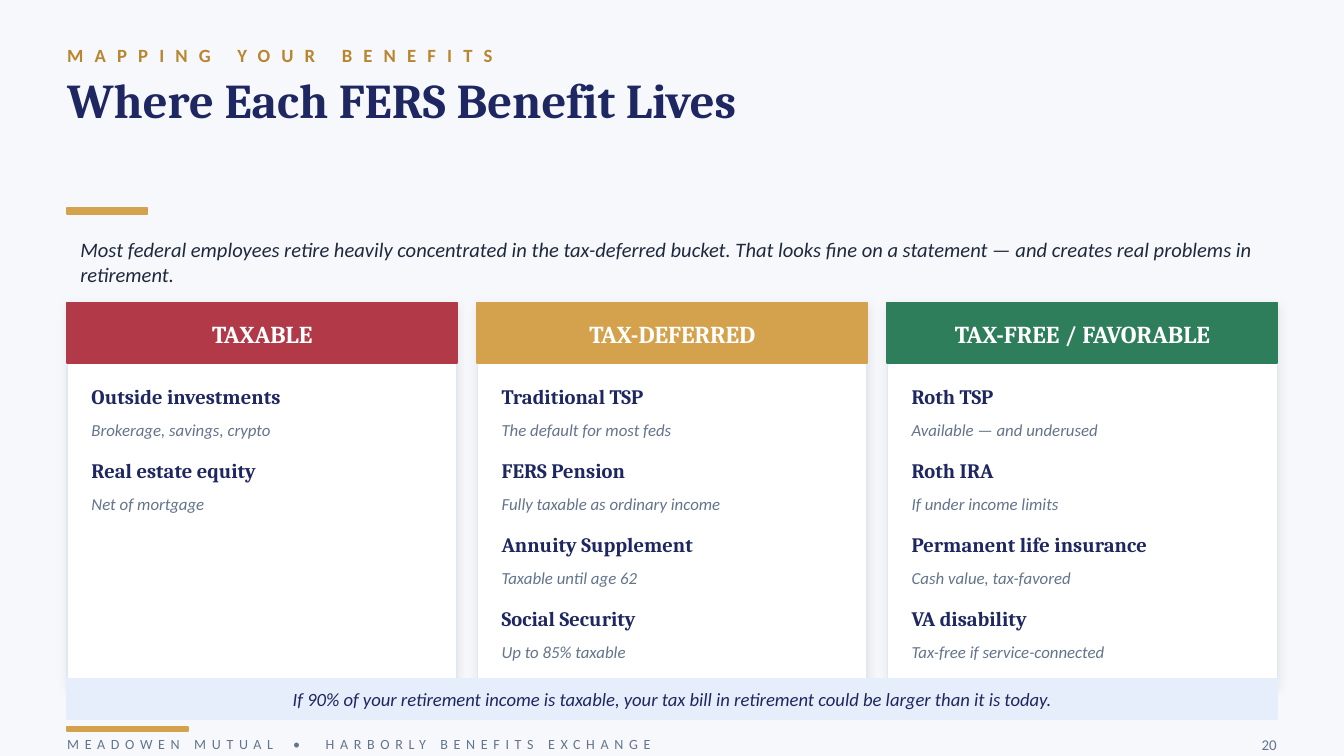
from dataclasses import dataclass

from lxml.etree import SubElement
from pptx import Presentation
from pptx.dml.color import RGBColor
from pptx.enum.shapes import MSO_SHAPE
from pptx.enum.text import MSO_ANCHOR, PP_ALIGN
from pptx.oxml.ns import qn
from pptx.util import Cm, Pt

NAVY, GOLD, SLATE, WHITE = "1E2761", "D4A24C", "64748B", "FFFFFF"
HEADING, BODY = "Cambria", "Calibri"
LEFT, FULL_WIDTH = 1.27, 22.86
CARD_TOP, CARD_WIDTH, CARD_PITCH, CARD_INSET = 5.72, 7.37, 7.75, 0.46
ENTRY_TOP, ENTRY_PITCH, NAME_HEIGHT = 7.19, 1.4, 0.61


@dataclass
class Entry:
    name: str
    note: str


@dataclass
class Bucket:
    title: str
    color: str
    entries: list[Entry]


BUCKETS = [
    Bucket("TAXABLE", "B23A48", [
        Entry("Outside investments", "Brokerage, savings, crypto"),
        Entry("Real estate equity", "Net of mortgage"),
    ]),
    Bucket("TAX-DEFERRED", GOLD, [
        Entry("Traditional TSP", "The default for most feds"),
        Entry("FERS Pension", "Fully taxable as ordinary income"),
        Entry("Annuity Supplement", "Taxable until age 62"),
        Entry("Social Security", "Up to 85% taxable"),
    ]),
    Bucket("TAX-FREE / FAVORABLE", "2E7D5B", [
        Entry("Roth TSP", "Available — and underused"),
        Entry("Roth IRA", "If under income limits"),
        Entry("Permanent life insurance", "Cash value, tax-favored"),
        Entry("VA disability", "Tax-free if service-connected"),
    ]),
]


def rgb(color: str) -> RGBColor:
    return RGBColor.from_string(color)


def add_span(para, text: str, size: float, color: str, font: str = BODY,
             bold: bool = False, italic: bool = False, spacing: float = 0) -> None:
    span = para.add_run()
    span.text = text
    span.font.name, span.font.size = font, Pt(size)
    span.font.bold, span.font.italic = bold, italic
    span.font.color.rgb = rgb(color)
    if spacing:
        span._r.get_or_add_rPr().set("spc", str(round(spacing * 100)))


def write(page, text: str, left: float, top: float, width: float, height: float, *,
          align=PP_ALIGN.LEFT, anchor=MSO_ANCHOR.MIDDLE,
          inset: tuple[float, float] = (0, 0), **style):
    box = page.shapes.add_textbox(Cm(left), Cm(top), Cm(width), Cm(height))
    frame = box.text_frame
    frame.word_wrap = True
    frame.vertical_anchor = anchor
    frame.margin_left = frame.margin_right = Cm(inset[0])
    frame.margin_top = frame.margin_bottom = Cm(inset[1])
    para = frame.paragraphs[0]
    para.alignment = align
    add_span(para, text, **style)
    return para


def add_block(page, left: float, top: float, width: float, height: float,
              fill: str, line: str = "", line_width: float = 1):
    block = page.shapes.add_shape(MSO_SHAPE.RECTANGLE, Cm(left), Cm(top), Cm(width), Cm(height))
    block.fill.solid()
    block.fill.fore_color.rgb = rgb(fill)
    block.line.color.rgb = rgb(line or fill)
    block.line.width = Pt(line_width)
    block.shadow.inherit = False
    return block


def add_soft_shadow(block) -> None:
    effects = block._element.spPr.find(qn("a:effectLst"))
    shadow = SubElement(effects, qn("a:outerShdw"), blurRad=str(Pt(6)), dist=str(Pt(1.5)),
                        dir="5400000", algn="bl", rotWithShape="0")
    color = SubElement(shadow, qn("a:srgbClr"), val="000000")
    SubElement(color, qn("a:alpha"), val="8000")


def add_bucket(page, bucket: Bucket, left: float) -> None:
    card = add_block(page, left, CARD_TOP, CARD_WIDTH, 7.24, WHITE, "E2E8F0", 0.75)
    add_soft_shadow(card)
    add_block(page, left, CARD_TOP, CARD_WIDTH, 1.14, bucket.color)
    write(page, bucket.title, left, 5.87, CARD_WIDTH, 0.89, align=PP_ALIGN.CENTER,
          size=13, color=WHITE, font=HEADING, bold=True)
    text_left, text_width = left + CARD_INSET, CARD_WIDTH - 2 * CARD_INSET
    for row, entry in enumerate(bucket.entries):
        top = ENTRY_TOP + row * ENTRY_PITCH
        write(page, entry.name, text_left, top, text_width, NAME_HEIGHT,
              size=11, color=NAVY, font=HEADING, bold=True)
        write(page, entry.note, text_left, top + NAME_HEIGHT, text_width, 0.66,
              size=9, color=SLATE, italic=True)


def main() -> None:
    deck = Presentation()
    deck.slide_width, deck.slide_height = Cm(25.4), Cm(14.29)
    page = deck.slides.add_slide(deck.slide_layouts[6])
    page.background.fill.solid()
    page.background.fill.fore_color.rgb = rgb("F6F8FC")

    # Heading
    write(page, "MAPPING YOUR BENEFITS", LEFT, 0.71, FULL_WIDTH, 0.66,
          size=10, color="B8862E", bold=True, spacing=6)
    write(page, "Where Each FERS Benefit Lives", LEFT, 1.32, 23.37, 2.54,
          anchor=MSO_ANCHOR.TOP, size=26, color=NAVY, font=HEADING, bold=True)
    add_block(page, LEFT, 3.94, 1.52, 0.1, GOLD)
    write(page, "Most federal employees retire heavily concentrated in the tax-deferred bucket. "
          "That looks fine on a statement — and creates real problems in retirement.",
          LEFT, 4.32, FULL_WIDTH, 1.27, inset=(0.25, 0.13),
          size=11, color="1E293B", italic=True)

    # Tax buckets
    for column, bucket in enumerate(BUCKETS):
        add_bucket(page, bucket, LEFT + column * CARD_PITCH)

    # Takeaway
    add_block(page, LEFT, 12.83, FULL_WIDTH, 0.76, "E6EEFB")
    write(page, "If 90% of your retirement income is taxable, "
          "your tax bill in retirement could be larger than it is today.",
          LEFT, 12.83, FULL_WIDTH, 0.76, align=PP_ALIGN.CENTER,
          size=10, color=NAVY, italic=True)

    # Footer, with wider letter spacing around the bullet
    add_block(page, LEFT, 13.74, 2.29, 0.08, GOLD)
    footer = write(page, "MEADOWEN MUTUAL", LEFT, 13.84, 15.24, 0.46,
                   size=7.5, color=SLATE, spacing=3)
    add_span(footer, " • ", size=7.5, color=SLATE, spacing=6)
    add_span(footer, "HARBORLY BENEFITS EXCHANGE", size=7.5, color=SLATE, spacing=3)
    write(page, "20", 22.86, 13.84, 1.27, 0.46, align=PP_ALIGN.RIGHT, size=8, color=SLATE)

    deck.save("out.pptx")


if __name__ == "__main__":
    main()
